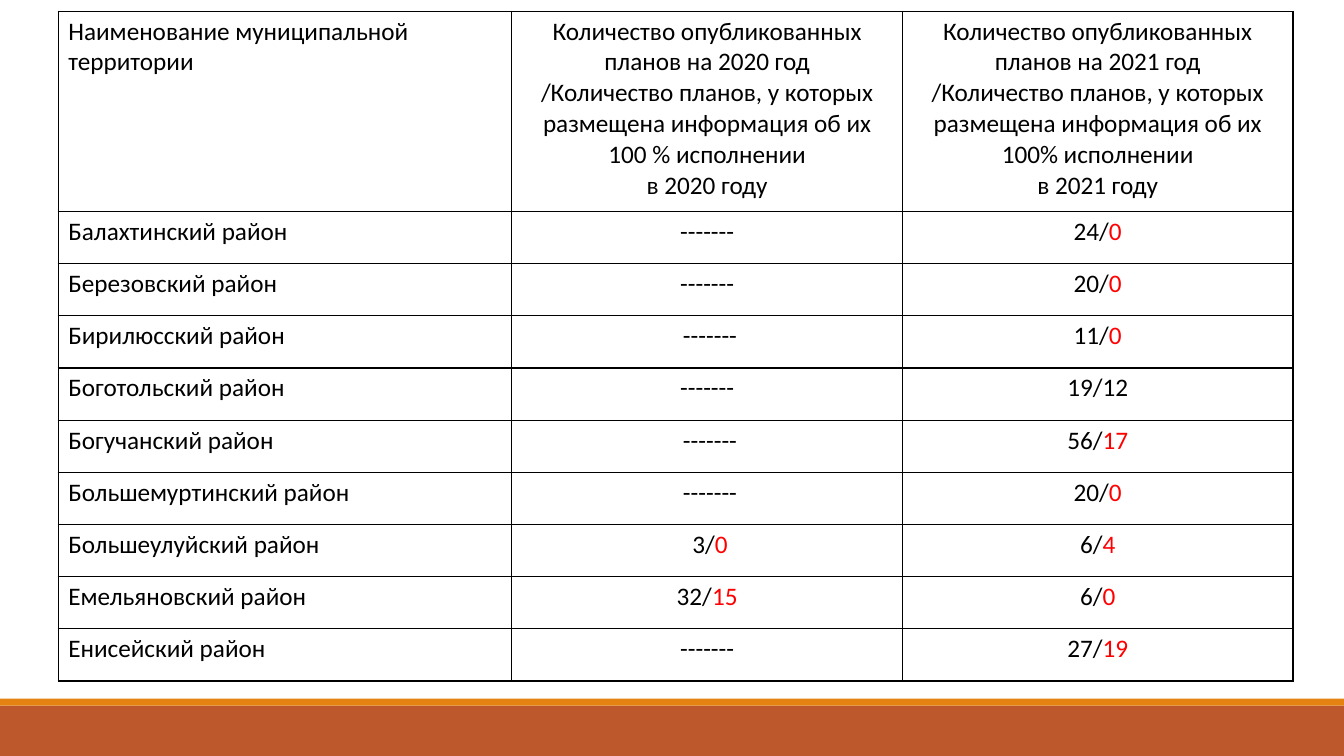
from lxml import etree
from pptx import Presentation
from pptx.dml.color import RGBColor
from pptx.enum.shapes import MSO_SHAPE
from pptx.enum.text import PP_ALIGN
from pptx.oxml.ns import qn
from pptx.util import Pt

RECT = MSO_SHAPE.RECTANGLE
LEFT, CENTER = PP_ALIGN.LEFT, PP_ALIGN.CENTER
BLACK = RGBColor(0x00, 0x00, 0x00)
RED = RGBColor(0xFF, 0x00, 0x00)
RUST = RGBColor(0xBD, 0x58, 0x2C)
ORANGE = RGBColor(0xE4, 0x83, 0x12)
WIDTH, HEIGHT = 960, 540
COLUMNS = [324, 279, 279]
HEADER_HEIGHT, ROW_HEIGHT = 143, 37.3
NONE = "-------"


def header(year, full):
    return [
        [f"Количество опубликованных планов на {year} год"],
        [f"/Количество планов, у которых размещена информация об их {full} исполнении"],
        [f"в {year} году"],
    ]


HEADERS = [
    [["Наименование муниципальной территории"]],
    header(2020, "100 %"),
    header(2021, "100%"),
]
DISTRICTS = [
    ("Балахтинский", [NONE], ["24/", "0"]),
    ("Березовский", [NONE], ["20/", "0"]),
    ("Бирилюсский", [" " + NONE], ["11/", "0"]),
    ("Боготольский", [NONE], ["19/12"]),
    ("Богучанский", [" " + NONE], ["56/", "17"]),
    ("Большемуртинский", [" " + NONE], ["20/", "0"]),
    ("Большеулуйский", [" 3/", "0"], ["6/", "4"]),
    ("Емельяновский", ["32/", "15"], ["6/", "0"]),
    ("Енисейский", [NONE], ["27/", "19"]),
]


class Deck:
    """Holds the text style and the current slide."""

    def __init__(self, prs):
        self.s = prs.slides.add_slide(prs.slide_layouts[6])
        self.style = {"name": "Calibri", "size": Pt(18), "bold": False}

    def band(self, top, height, color):
        sp = self.s.shapes.add_shape(RECT, 0, Pt(top), Pt(WIDTH), Pt(height))
        sp.shadow.inherit = False
        sp.fill.solid()
        sp.fill.fore_color.rgb = color
        sp.line.fill.background()

    def borders(self, cell):
        tcPr = cell._tc.get_or_add_tcPr()
        for side in ("lnL", "lnR", "lnT", "lnB"):
            ln = etree.SubElement(tcPr, qn(f"a:{side}"), w=str(Pt(1)))
            fill = etree.SubElement(ln, qn("a:solidFill"))
            etree.SubElement(fill, qn("a:srgbClr"), val=str(BLACK))

    def cell(self, cell, paragraphs, align):
        self.borders(cell)
        cell.fill.background()
        tf = cell.text_frame
        for i, parts in enumerate(paragraphs):
            p = tf.add_paragraph() if i else tf.paragraphs[0]
            p.alignment = align
            for text, color in zip(parts, (BLACK, RED)):
                r = p.add_run()
                r.text = text
                for key, value in self.style.items():
                    setattr(r.font, key, value)
                r.font.color.rgb = color

    def table(self, left, top, widths, heights, rows):
        tbl = self.s.shapes.add_table(
            len(rows), len(widths), Pt(left), Pt(top), Pt(sum(widths)), Pt(sum(heights))
        ).table
        tbl.first_row = tbl.horz_banding = False
        for column, width in zip(tbl.columns, widths):
            column.width = Pt(width)
        for row, height, contents in zip(tbl.rows, heights, rows):
            row.height = Pt(height)
            for i, (cell, paragraphs) in enumerate(zip(row.cells, contents)):
                self.cell(cell, paragraphs, CENTER if i else LEFT)


def main():
    prs = Presentation()
    prs.slide_width, prs.slide_height = Pt(WIDTH), Pt(HEIGHT)
    deck = Deck(prs)
    deck.band(504, 36, RUST)
    deck.band(499, 5, ORANGE)
    rows = [HEADERS] + [
        [[[f"{name} район"]], [plans_2020], [plans_2021]]
        for name, plans_2020, plans_2021 in DISTRICTS
    ]
    heights = [HEADER_HEIGHT] + [ROW_HEIGHT] * len(DISTRICTS)
    deck.table(41.6, 8, COLUMNS, heights, rows)
    prs.save("out.pptx")


if __name__ == "__main__":
    main()
